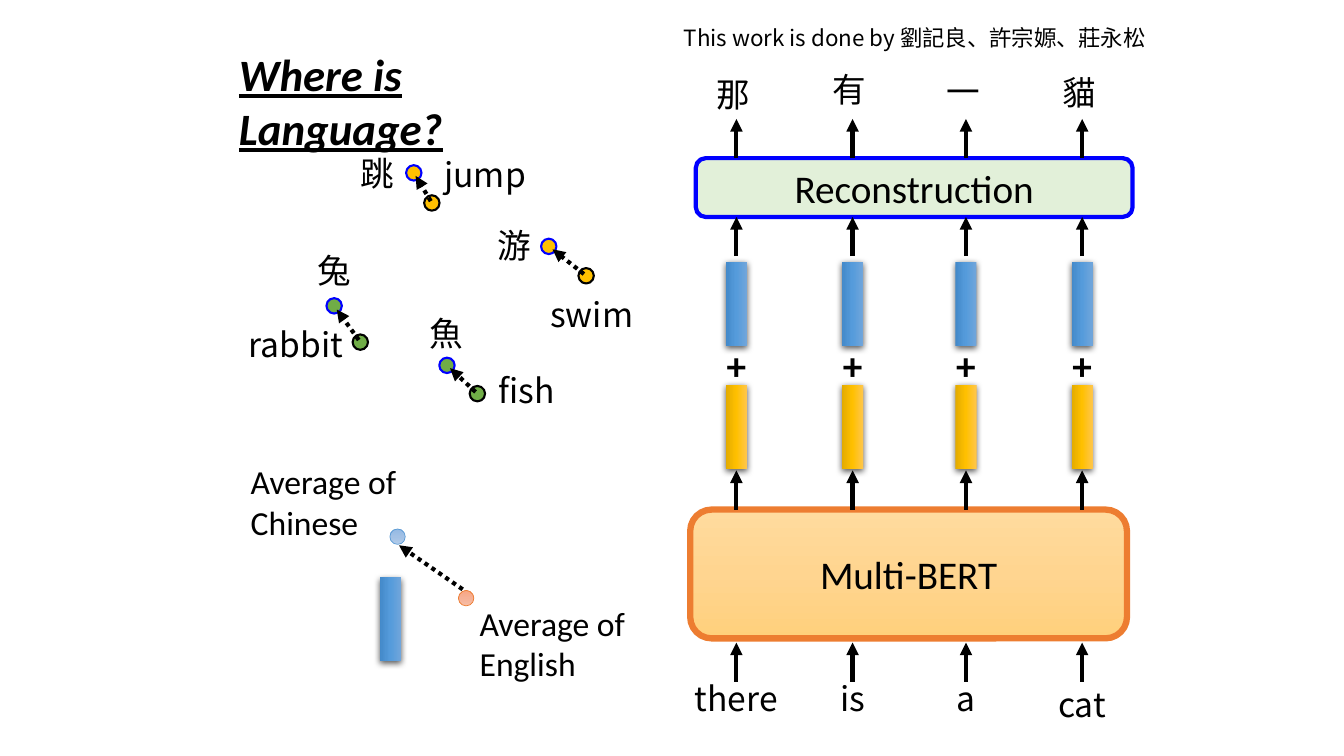
from lxml import etree
from pptx import Presentation
from pptx.dml.color import RGBColor
from pptx.enum.dml import MSO_LINE
from pptx.enum.shapes import MSO_CONNECTOR, MSO_SHAPE
from pptx.enum.text import MSO_ANCHOR, MSO_AUTO_SIZE, PP_ALIGN
from pptx.oxml.ns import qn
from pptx.util import Pt

LEFT, CENTER, RIGHT = PP_ALIGN.LEFT, PP_ALIGN.CENTER, PP_ALIGN.RIGHT
RECTANGLE, ROUNDED, OVAL = MSO_SHAPE.RECTANGLE, MSO_SHAPE.ROUNDED_RECTANGLE, MSO_SHAPE.OVAL
STRAIGHT = MSO_CONNECTOR.STRAIGHT
DOTTED = MSO_LINE.ROUND_DOT
TOP, MIDDLE = MSO_ANCHOR.TOP, MSO_ANCHOR.MIDDLE
NO_AUTOFIT, GROW = MSO_AUTO_SIZE.NONE, MSO_AUTO_SIZE.SHAPE_TO_FIT_TEXT

CALIBRI = "Calibri"
NOTO = "Noto Sans CJK SC"
COLORS = {
    "black": "000000",
    "chinese outline": "0000FF",
    "verb": "FFC000",
    "noun": "70AD47",
    "reconstruction": "E2F0D9",
    "orange line": "ED7D31",
    "blue line": "5B9BD5",
}
GRADIENTS = {
    "model": ("FFDB9E", "FFD590", "FFD07C"),
    "token": ("E3AB00", "FFC000", "FFC64B"),
    "language": ("448ACA", "559BDB", "71A6DB"),
    "chinese average": ("B1CBE9", "A3C1E5", "93B9E4"),
    "english average": ("F7BDA5", "F5B196", "F8A582"),
}
DOWNWARD, RIGHTWARD, UPWARD = 270, 0, 90

# column centre, output word, its top, input word, its top
TOKENS = [
    (46, "那", 9, "there", 441),
    (129, "有", 6, "is", 441),
    (210, "一", 7, "a", 441),
    (293, "貓", 8, "cat", 445),
]
# kind, then for Chinese and English: word, label position, dot centre
WORD_PAIRS = [
    ("verb", ("跳", (85.6, 1), (130.6, 18.5)), ("jump", (145.3, 1.6), (143.5, 40))),
    ("verb", ("游", (183, 52), (227, 71)), ("swim", (221, 101.6), (253.7, 92))),
    ("noun", ("兔", (54.6, 70), (73.7, 113.5)), ("rabbit", (5.6, 122.5), (92.4, 139.4))),
    ("noun", ("魚", (134.5, 115.3), (154.3, 156)), ("fish", (184.2, 155.6), (176, 176.2))),
]


def rgb(name):
    return RGBColor.from_string(COLORS[name])


def add_run(paragraph, text, size, font, bold=False):
    run = paragraph.add_run()
    run.text = text
    run.font.size = Pt(size)
    run.font.name = font
    run.font.bold = bold
    run.font.color.rgb = rgb("black")
    east_asian = etree.SubElement(run._r.get_or_add_rPr(), qn("a:ea"))
    east_asian.set("typeface", font)
    return run


def add_label(slide, left, top, width, height, text, size=24, font=NOTO,
              align=LEFT, bold=False):
    box = slide.shapes.add_textbox(Pt(left), Pt(top), Pt(width), Pt(height))
    frame = box.text_frame
    frame.word_wrap = True
    frame.auto_size = GROW
    frame.paragraphs[0].alignment = align
    add_run(frame.paragraphs[0], text, size, font, bold)


def fill_gradient(shape, name, angle):
    shape.fill.gradient()
    shape.fill.gradient_angle = angle
    stops = shape._element.spPr.find(qn("a:gradFill")).find(qn("a:gsLst"))
    for stop in list(stops):
        stops.remove(stop)
    for position, color in zip((0, 50000, 100000), GRADIENTS[name]):
        stop = etree.SubElement(stops, qn("a:gs"), pos=str(position))
        etree.SubElement(stop, qn("a:srgbClr"), val=color)


def add_figure(slide, kind, left, top, width, height, fill, line=None,
               line_width=0, angle=DOWNWARD):
    """Add a shape whose fill names either a plain color or a gradient."""
    shape = slide.shapes.add_shape(kind, Pt(left), Pt(top), Pt(width), Pt(height))
    shape.shadow.inherit = False
    if fill in GRADIENTS:
        fill_gradient(shape, fill, angle)
    else:
        shape.fill.solid()
        shape.fill.fore_color.rgb = rgb(fill)
    if line:
        shape.line.color.rgb = rgb(line)
        shape.line.width = Pt(line_width)
    else:
        shape.line.fill.background()
    return shape


def add_block(slide, left, top, width, height, text, fill, line, line_width):
    block = add_figure(slide, ROUNDED, left, top, width, height, fill, line, line_width)
    block.text_frame.vertical_anchor = MIDDLE
    paragraph = block.text_frame.paragraphs[0]
    paragraph.alignment = CENTER
    add_run(paragraph, text, 28, CALIBRI)


def add_dot(slide, x, y, fill, line, line_width, angle=DOWNWARD):
    size = 11
    add_figure(slide, OVAL, x - size / 2, y - size / 2, size, size, fill, line,
               line_width, angle)


def add_vector_bar(slide, x, y, fill):
    """Add an upright embedding bar with a soft shadow, centred on x and y."""
    width, height = 15, 60
    bar = add_figure(slide, RECTANGLE, x - width / 2, y - height / 2, width, height,
                     fill, angle=RIGHTWARD)
    effects = bar._element.spPr.find(qn("a:effectLst"))
    shadow = etree.SubElement(effects, qn("a:outerShdw"), blurRad=str(Pt(4.5)),
                              dist=str(Pt(1.5)), dir="5400000", rotWithShape="0")
    color = etree.SubElement(shadow, qn("a:srgbClr"), val=COLORS["black"])
    etree.SubElement(color, qn("a:alpha"), val="63000")


def add_arrow(slide, start, end, dash=None):
    arrow = slide.shapes.add_connector(STRAIGHT, *(Pt(value) for value in (*start, *end)))
    arrow.line.color.rgb = rgb("black")
    arrow.line.width = Pt(3)
    if dash:
        arrow.line.dash_style = dash
    etree.SubElement(arrow.line._get_or_add_ln(), qn("a:tailEnd"), type="triangle")
    etree.SubElement(arrow._element.spPr, qn("a:effectLst"))


def add_heading(slide, left, top, width, height):
    title = slide.shapes.title
    title.left, title.top, title.width, title.height = map(Pt, (left, top, width, height))
    frame = title.text_frame
    frame.word_wrap = True
    frame.auto_size = NO_AUTOFIT
    frame.vertical_anchor = TOP
    frame.paragraphs[0].alignment = LEFT
    run = add_run(frame.paragraphs[0], "Where is Language?", 32, CALIBRI, bold=True)
    run.font.italic = True
    run.font.underline = True


def add_model(slide, left, top):
    add_block(slide, left + 13, top + 324, 312, 92, "Multi-BERT", "model", "orange line", 4.5)
    add_block(slide, left + 17, top + 73, 312, 42, "Reconstruction", "reconstruction",
              "chinese outline", 3)
    for column, output, output_top, word, word_top in TOKENS:
        x = left + column
        for tail in (447, 324, 143, 73):
            add_arrow(slide, (x, top + tail), (x, top + tail - 28))
        add_vector_bar(slide, x, top + 265, "token")
        add_vector_bar(slide, x, top + 177, "language")
        add_label(slide, x - 19.5, top + 200, 39, 41, "+", 28, CALIBRI, CENTER, bold=True)
        add_label(slide, x - 42.5, top + output_top, 81, 36, output, align=CENTER)
        add_label(slide, x - 40.5, top + word_top, 81, 36, word, align=CENTER)


def add_word_pairs(slide, left, top):
    for kind, *pair in WORD_PAIRS:
        centres = []
        for (word, (label_x, label_y), (x, y)), outline in zip(pair, ("chinese outline", "black")):
            centres.append((left + x, top + y))
            add_dot(slide, left + x, top + y, kind, outline, 1.5)
            add_label(slide, left + label_x, top + label_y, 92, 36, word)
        (chinese_x, chinese_y), (english_x, english_y) = centres
        start, end = ((chinese_x + share * (english_x - chinese_x),
                       chinese_y + share * (english_y - chinese_y)) for share in (0.94, 0.1))
        add_arrow(slide, start, end, DOTTED)


def add_averages(slide, left, top):
    add_arrow(slide, (left + 160.5, top + 96), (left + 115, top + 64.5), DOTTED)
    add_dot(slide, left + 114, top + 58.4, "chinese average", "blue line", 0.5, UPWARD)
    add_dot(slide, left + 163, top + 102.3, "english average", "orange line", 0.5, UPWARD)
    add_label(slide, left + 2, top + 1, 123, 66, "Average of Chinese", font=CALIBRI)
    add_label(slide, left + 165.5, top + 102, 123, 66, "Average of English", font=CALIBRI)
    add_vector_bar(slide, left + 109, top + 117.4, "language")


def main():
    presentation = Presentation()
    presentation.slide_width, presentation.slide_height = Pt(960), Pt(540)
    slide = presentation.slides.add_slide(presentation.slide_layouts[5])
    add_heading(slide, 163.5, 30, 280, 46)
    add_label(slide, 385, 13.7, 440.6, 27, "This work is done by 劉記良、許宗嫄、莊永松", 16,
              align=RIGHT)
    add_model(slide, 480, 40)
    add_word_pairs(slide, 165, 105)
    add_averages(slide, 170, 325)
    presentation.save("out.pptx")


if __name__ == "__main__":
    main()
